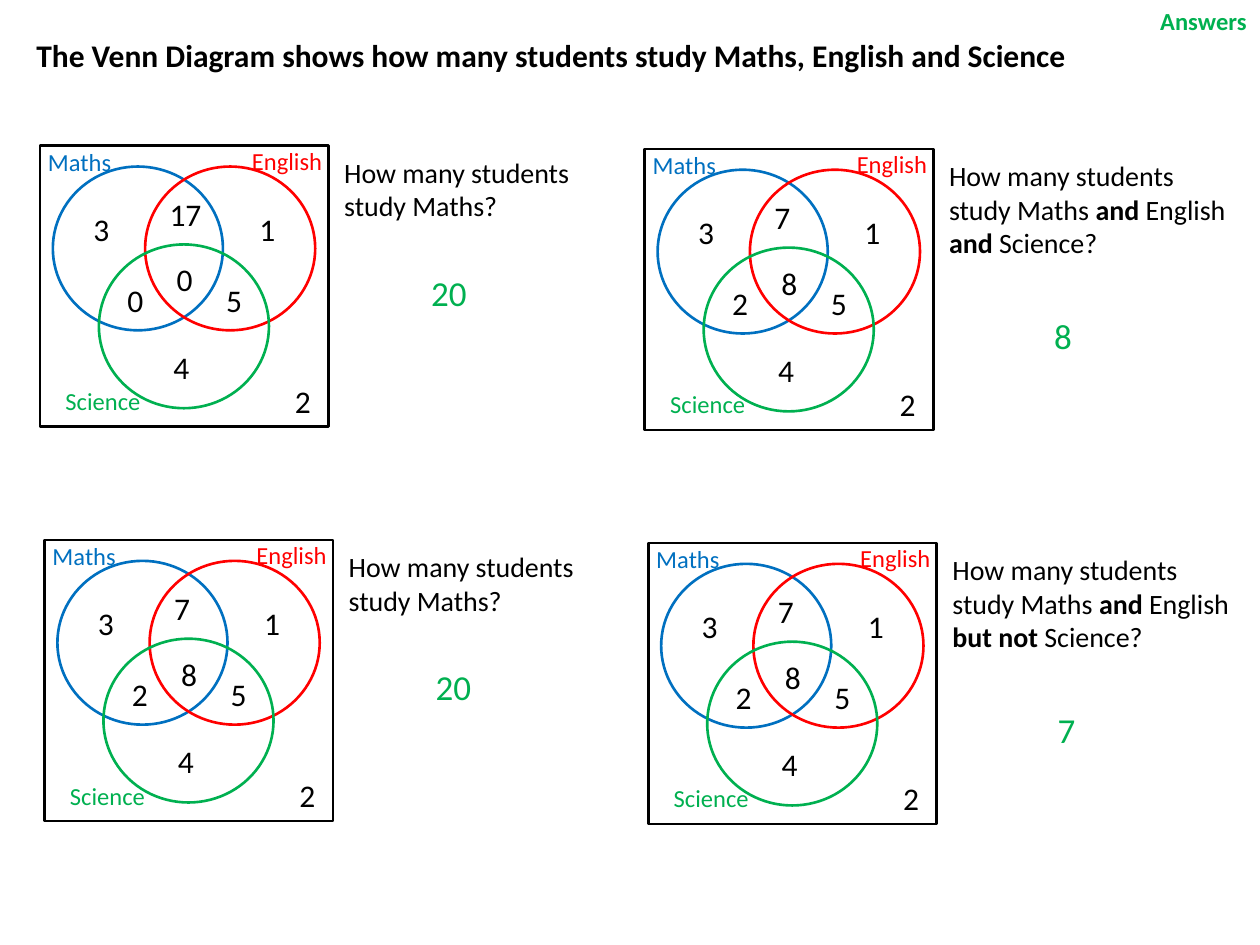
from pptx import Presentation
from pptx.dml.color import RGBColor
from pptx.enum.shapes import MSO_SHAPE
from pptx.enum.text import PP_ALIGN
from pptx.util import Pt

RECT, OVAL = MSO_SHAPE.RECTANGLE, MSO_SHAPE.OVAL
LEFT, MID = PP_ALIGN.LEFT, PP_ALIGN.CENTER
BLACK, BLUE, RED, GREEN = "000000", "0070C0", "FF0000", "00B050"

# Places are measured from the top left corner of each frame
CIRCLES = [(7.4, 11.9, BLUE), (60.1, 11.9, RED), (33.7, 56.4, GREEN)]
LABELS = [
    ("Maths", -2.5, -2.8, 80.6, BLUE),
    ("English", 114.1, -3.3, 57.6, RED),
    ("Science", 7.5, 133.9, 80.6, GREEN),
]
# Maths only, Maths + English, English only, Maths + Science,
# all three, English + Science, Science only, none
REGIONS = [
    (23.5, 32.9), (67, 24.3), (118.4, 32.9), (42.9, 73.5),
    (71, 62), (99.3, 73.8), (69.2, 112), (138.6, 131.5),
]
COUNTS = (3, 7, 1, 2, 8, 5, 4, 2)
SHORT, LONG = (166.8, 68), (172.1, 91.1)  # answer places

# Frame corner, counts, question (every second part bold), answer, its place
TASKS = [
    (22.8, 83.3, (3, 17, 1, 0, 0, 5, 4, 2),
     ["How many students study Maths?"], "20", SHORT),
    (25.4, 308.6, COUNTS,
     ["How many students study Maths?"], "20", SHORT),
    (368.4, 85.1, COUNTS,
     ["How many students study Maths ", "and", " English ", "and",
      " Science?"], "8", LONG),
    (370.4, 310.3, COUNTS,
     ["How many students study Maths ", "and", " English ", "but not",
      " Science?"], "7", LONG),
]


def paint(code):
    return RGBColor.from_string(code)


def outline(slide, kind, x, y, width, height, color):
    shape = slide.shapes.add_shape(kind, Pt(x), Pt(y), Pt(width), Pt(height))
    shape.shadow.inherit = False
    shape.fill.background()
    shape.line.color.rgb = paint(color)
    shape.line.width = Pt(1.5)


def write(slide, parts, x, y, width, height, size, color=BLACK,
          align=LEFT, bold=False, wrap=True):
    box = slide.shapes.add_textbox(Pt(x), Pt(y), Pt(width), Pt(height))
    frame = box.text_frame
    frame.word_wrap = wrap
    para = frame.paragraphs[0]
    para.alignment = align
    para.font.name = "Calibri"
    para.font.size = Pt(size)
    para.font.color.rgb = paint(color)
    para.font.bold = bold
    for i, part in enumerate(parts):
        run = para.add_run()
        run.text = part
        if i % 2:
            run.font.bold = True


def venn(slide, x, y, counts):
    outline(slide, RECT, x, y, 164.9, 160.6, BLACK)
    for dx, dy, color in CIRCLES:
        outline(slide, OVAL, x + dx, y + dy, 97.2, 93.6, color)
    for name, dx, dy, width, color in LABELS:
        write(slide, [name], x + dx, y + dy, width, 24.2, 14, color)
    for (dx, dy), count in zip(REGIONS, counts):
        width = 34.6 if count > 9 else 26
        write(slide, [str(count)], x + dx, y + dy, width, 29.1, 18)


def main():
    deck = Presentation()
    deck.slide_width, deck.slide_height = Pt(720), Pt(540)
    slide = deck.slides.add_slide(deck.slide_layouts[6])

    # Heading
    write(slide, ["The Venn Diagram shows how many students study Maths, "
                  "English and Science"],
          13.7, 17.3, 706.3, 29.1, 18, bold=True)
    write(slide, ["Answers"], 655.9, 0, 64.1, 24.2, 14, GREEN,
          bold=True, wrap=False)

    # Diagrams with question and answer
    for x, y, counts, ask, answer, (dx, dy) in TASKS:
        venn(slide, x, y, counts)
        height = 65.5 if len(ask) > 1 else 46
        write(slide, ask, x + 166.8, y + 1.9, 174.2, height, 16)
        write(slide, [answer], x + dx, y + dy, 133.9, 31.5, 20, GREEN, MID)

    deck.save("out.pptx")


if __name__ == "__main__":
    main()
